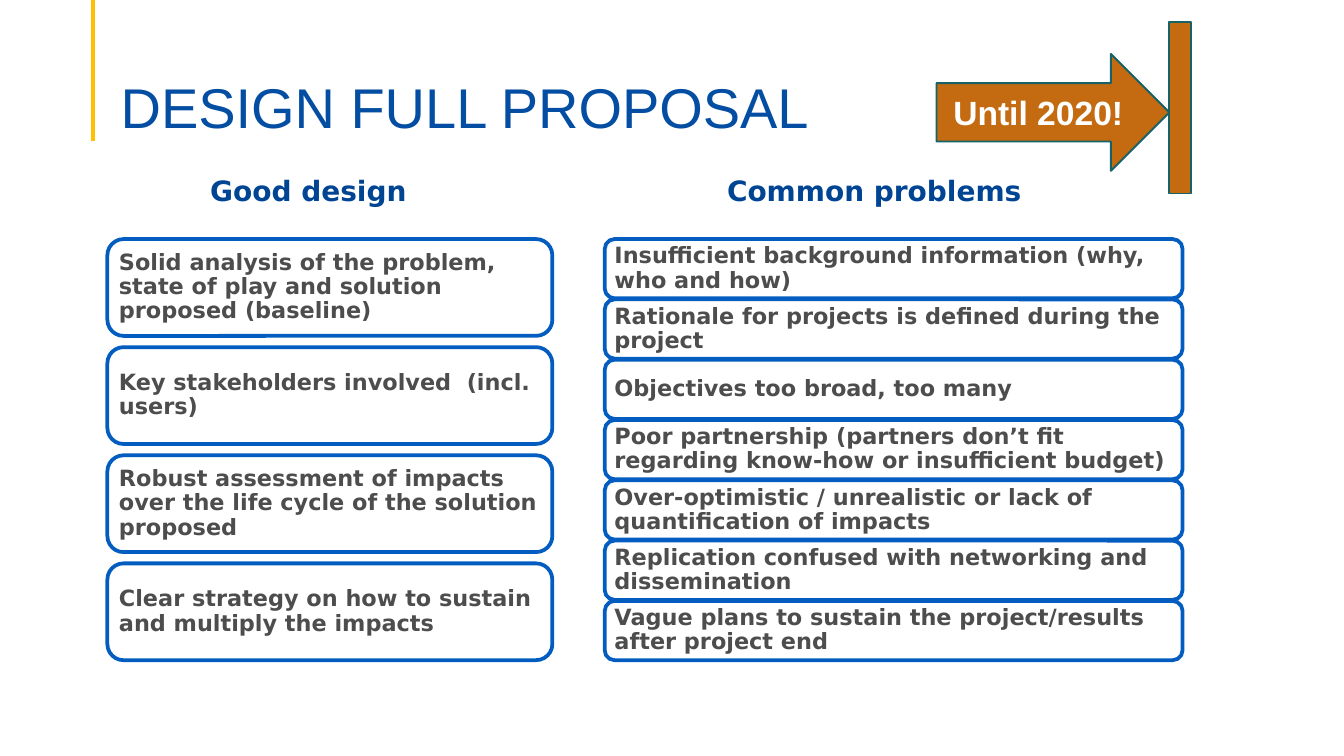
from pptx import Presentation
from pptx.dml.color import RGBColor
from pptx.enum import shapes, text
from pptx.oxml.ns import qn
from pptx.util import Cm, Pt
from lxml import etree

NAVY = RGBColor(0x03, 0x4E, 0xA2)
HEAD = RGBColor(0x00, 0x44, 0x94)
BLUE = RGBColor(0x03, 0x5D, 0xC1)
GREY = RGBColor(0x4D, 0x4D, 0x4D)
RUST = RGBColor(0xC4, 0x6A, 0x11)
TEAL = RGBColor(0x16, 0x62, 0x67)
GOLD = RGBColor(0xFF, 0xC0, 0x00)
WHITE = RGBColor(0xFF, 0xFF, 0xFF)


def write(box, words, size, color, font="DejaVu Sans", bold=True,
          align=text.PP_ALIGN.LEFT, anchor=text.MSO_ANCHOR.MIDDLE,
          inset=None, space=1.0, wrap=True):
    frame = box.text_frame
    frame.word_wrap = wrap
    frame.vertical_anchor = anchor
    if inset:
        (frame.margin_left, frame.margin_top,
         frame.margin_right, frame.margin_bottom) = [Cm(i) for i in inset]
    para = frame.paragraphs[0]
    para.alignment = align
    para.line_spacing = space
    run = para.add_run()
    run.text = words
    run.font.name, run.font.size = font, Pt(size)
    run.font.bold, run.font.color.rgb = bold, color


def draw(kind, x, y, w, h, fill, line, width):
    shape = slide.shapes.add_shape(kind, Cm(x), Cm(y), Cm(w), Cm(h))
    shape.shadow.inherit = False
    shape.fill.solid()
    shape.fill.fore_color.rgb = fill
    shape.line.color.rgb = line
    shape.line.width = Pt(width)
    return shape


deck = Presentation()
deck.slide_width, deck.slide_height = Cm(25.4), Cm(14.29)
slide = deck.slides.add_slide(deck.slide_layouts[5])

# Title and its accent line
rule = slide.shapes.add_connector(
    shapes.MSO_CONNECTOR.STRAIGHT, Cm(1.75), 0, Cm(1.75), Cm(2.67))
rule.line.color.rgb = GOLD
rule.line.width = Pt(2.25)
etree.SubElement(rule.line._get_or_add_ln().getparent(), qn("a:effectLst"))

title = slide.shapes.title
title.left, title.top, title.width, title.height = Cm(2.03), Cm(1.02), Cm(21.9), Cm(1.63)
write(title, "DESIGN FULL PROPOSAL", 30, NAVY, font="Arial", bold=False,
      anchor=text.MSO_ANCHOR.BOTTOM, inset=(0.25, 0.13, 0.25, 0), space=0.9)

# Two columns of cards between the same top and bottom
TOP, END = 4.52, 12.48
columns = [
    ("Good design", 1.63, 8.4, 2.03, 8.41, 1.83, [
        "Solid analysis of the problem, state of play and solution proposed (baseline)",
        "Key stakeholders involved  (incl. users)",
        "Robust assessment of impacts over the life cycle of the solution proposed",
        "Clear strategy on how to sustain and multiply the impacts",
    ]),
    ("Common problems", 12.7, 7.65, 11.43, 10.92, 1.12, [
        "Insufficient background information (why, who and how)",
        "Rationale for projects is defined during the project",
        "Objectives too broad, too many",
        "Poor partnership (partners don’t fit regarding know-how or insufficient budget)",
        "Over-optimistic / unrealistic or lack of quantification of impacts",
        "Replication confused with networking and dissemination",
        "Vague plans to sustain the project/results after project end",
    ]),
]
for name, left, span, x, w, h, items in columns:
    head = slide.shapes.add_textbox(Cm(left), Cm(3.15), Cm(span), Cm(0.86))
    write(head, name, 15, HEAD, align=text.PP_ALIGN.CENTER,
          anchor=text.MSO_ANCHOR.TOP)
    step = (END - TOP - h) / (len(items) - 1)
    for i, item in enumerate(items):
        card = draw(shapes.MSO_SHAPE.ROUNDED_RECTANGLE, x, TOP + i * step, w, h,
                    WHITE, BLUE, 2)
        tint = card.fill._xPr.find(qn("a:solidFill"))[0]
        etree.SubElement(tint, qn("a:alpha"), val="60000")
        write(card, item, 12, GREY, inset=[0.13] * 4, space=0.9)

# Deadline arrow that stops at a bar
arrow = draw(shapes.MSO_SHAPE.RIGHT_ARROW, 17.7, 1.02, 4.4, 2.21, RUST, TEAL, 1)
write(arrow, "Until 2020!", 18, WHITE, font="Arial",
      align=text.PP_ALIGN.CENTER, wrap=False)
draw(shapes.MSO_SHAPE.RECTANGLE, 22.1, 0.41, 0.41, 3.25, RUST, TEAL, 1)

deck.save("out.pptx")
